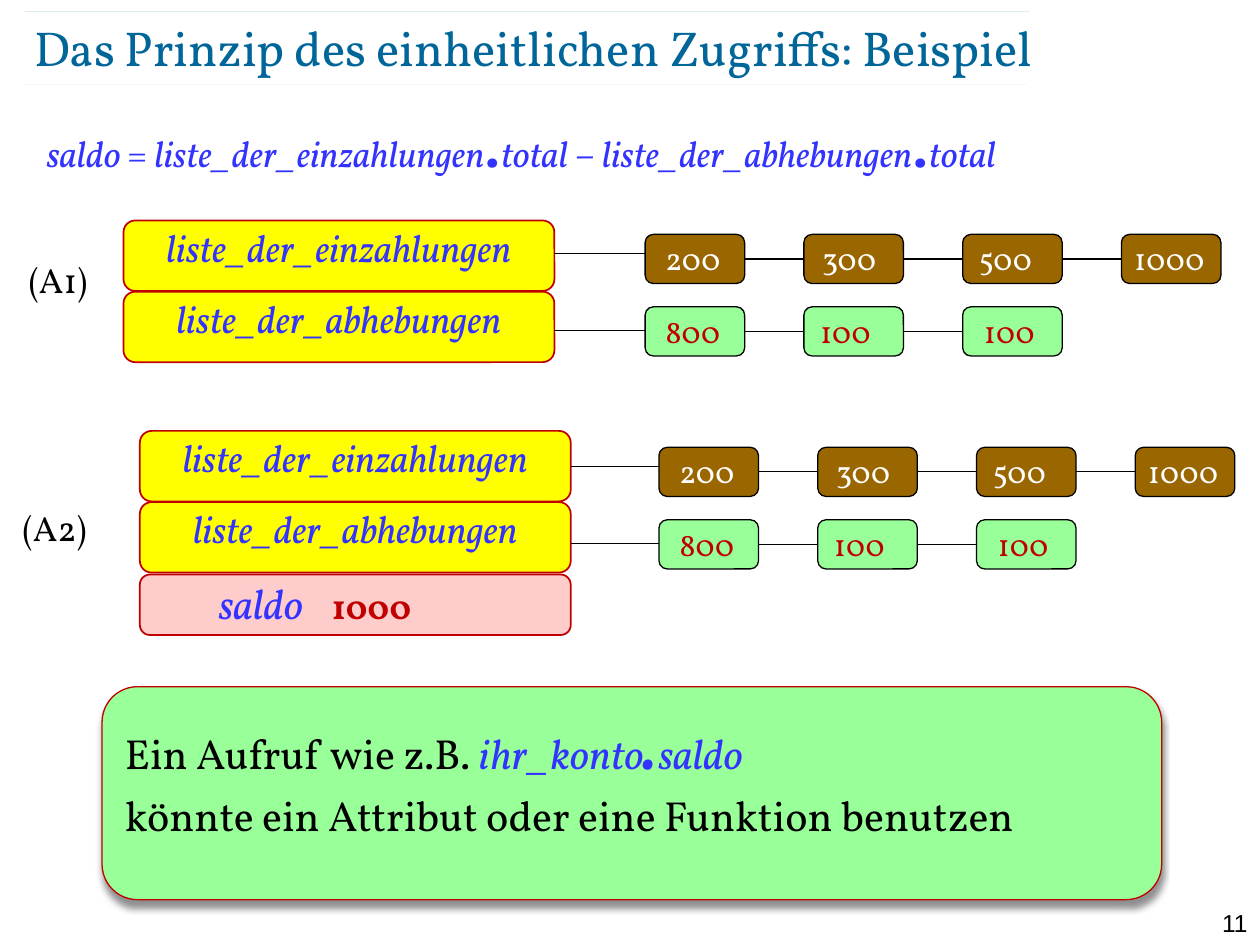
from lxml import etree
from pptx import Presentation
from pptx.dml.color import RGBColor
from pptx.enum import shapes, text
from pptx.oxml import parse_xml
from pptx.oxml.ns import nsdecls, qn
from pptx.util import Inches, Pt

color = RGBColor.from_string
LEFT, CENTER, RIGHT = text.PP_ALIGN.LEFT, text.PP_ALIGN.CENTER, text.PP_ALIGN.RIGHT
BLUE, RED, BLACK, GREEN = "3333FF", "C00000", "000000", "99FF99"

deck = Presentation()
deck.slide_width, deck.slide_height = Inches(10), Inches(7.5)
slide = deck.slides.add_slide(deck.slide_layouts[6])


def write(frame, words, size, ink, align=LEFT, inset=None, italic=False, font="Vollkorn"):
    frame.word_wrap = True
    frame.vertical_anchor = text.MSO_ANCHOR.TOP
    if inset is not None:
        frame.margin_left = frame.margin_top = frame.margin_right = frame.margin_bottom = Inches(inset)
    paragraph = frame.paragraphs[0]
    paragraph.alignment = align
    paragraph.font.name, paragraph.font.size = font, Pt(size)
    paragraph.font.color.rgb = color(ink)
    paragraph.font.italic = italic
    paragraph.add_run().text = words
    return paragraph


def rounded(left, top, width, height, fill, edge, weight):
    shape = slide.shapes.add_shape(shapes.MSO_SHAPE.ROUNDED_RECTANGLE,
                                   Inches(left), Inches(top), Inches(width), Inches(height))
    shape.shadow.inherit = False
    shape.fill.solid()
    shape.fill.fore_color.rgb = color(fill)
    shape.line.color.rgb = color(edge)
    shape.line.width = Pt(weight)
    return shape


number = slide.shapes.add_textbox(Inches(9.45), Inches(7.16), Inches(0.55), Inches(0.24))
write(number.text_frame, "11", 14, BLACK, RIGHT, font="Arial")

for left, top in [(0.18, 0.67), (0.2, 0.09)]:
    rule = slide.shapes.add_connector(shapes.MSO_CONNECTOR.STRAIGHT, Inches(left), Inches(top),
                                      Inches(left + 7.97), Inches(top))
    rule.line.color.rgb = color("006699")
    rule.line.width = Pt(0.1)
    tint = rule.line._ln.find(".//" + qn("a:srgbClr"))
    etree.SubElement(tint, qn("a:alpha"), val="35000")
    etree.SubElement(rule._element.spPr, qn("a:effectLst"))

title = slide.shapes.add_textbox(Inches(0.27), Inches(0.13), Inches(8.69), Inches(0.48))
write(title.text_frame, "Das Prinzip des einheitlichen Zugriffs: Beispiel", 28, "006699", inset=0)
title.text_frame.vertical_anchor = text.MSO_ANCHOR.MIDDLE

formula = slide.shapes.add_textbox(Inches(0.27), Inches(0.96), Inches(9.4), Inches(6.17))
equation = write(formula.text_frame, "saldo ", 21, BLUE, italic=True)
equation.line_spacing = 0.6
for words, size, italic in [("= ", 21, False), ("liste_der_einzahlungen", 21, True), (".", 40, False),
                            ("total", 21, True), (" – ", 21, False),
                            ("liste_der_abhebungen", 21, True), (".", 40, False), ("total", 21, True)]:
    run = equation.add_run()
    run.text = words
    run.font.size, run.font.italic = Pt(size), italic

summary = rounded(0.81, 5.45, 8.41, 1.69, GREEN, RED, 0.75)
effects = summary._element.spPr.find(qn("a:effectLst"))
effects.append(parse_xml(
    f'<a:outerShdw {nsdecls("a")} blurRad="50800" dist="50800" dir="5400000" algn="ctr" rotWithShape="0">'
    '<a:srgbClr val="000000"><a:alpha val="43000"/></a:srgbClr></a:outerShdw>'))
call = write(summary.text_frame, "Ein Aufruf wie z.B. ", 24, BLACK)
call.line_spacing = 0.9
for words, size in [("ihr_konto", 24), (".", 44), ("saldo", 24)]:
    run = call.add_run()
    run.text = words
    run.font.size, run.font.italic = Pt(size), True
    run.font.color.rgb = color(BLUE)
answer = summary.text_frame.add_paragraph()
answer.text = "könnte ein Attribut oder eine Funktion benutzen"
answer.alignment = LEFT
answer.line_spacing, answer.space_before = 0.9, Pt(5)
answer.font.name, answer.font.size = "Vollkorn", Pt(24)
answer.font.color.rgb = color(BLACK)

for name, left, top, width, inset in [("(A1)", 0.13, 2, 0.81, None), ("(A2)", 0.18, 4.02, 0.69, 0)]:
    variant = slide.shapes.add_textbox(Inches(left), Inches(top), Inches(width), Inches(0.43))
    write(variant.text_frame, name, 20, BLACK, inset=inset)

lists = [
    ("liste_der_einzahlungen", "996600", "FFFFFF", 0.15,
     [("200", -0.15), ("300", 1.09), ("500", 2.33), ("1000", 3.63)]),
    ("liste_der_abhebungen", GREEN, RED, 0.19,
     [("800", -0.15), ("100", 1.06), ("100", 2.36)]),
]
for field_left, field_top, chain_left, chain_top in [(0.98, 1.75, 5.12, 1.86), (1.11, 3.42, 5.23, 3.55)]:
    for row, (name, fill, ink, link_drop, amounts) in enumerate(lists):
        top = chain_top + row * 0.575
        field = rounded(field_left, field_top + row * 0.565, 3.42, 0.56, "FFFF00", RED, 1)
        write(field.text_frame, name, 22, BLUE, CENTER, 0, True)
        previous = None
        for column, (amount, offset) in enumerate(amounts):
            left = chain_left + column * 1.26
            entry = rounded(left, top, 0.79, 0.39, fill, BLACK, 0.75)
            link = slide.shapes.add_connector(shapes.MSO_CONNECTOR.STRAIGHT,
                                              Inches(field_left + 3.42), Inches(top + link_drop),
                                              Inches(left), Inches(top + link_drop))
            if previous:
                link.begin_connect(previous, 3)
                link.end_connect(entry, 1)
            link.line.color.rgb = color(BLACK)
            link.line.width = Pt(0.75)
            etree.SubElement(link._element.spPr, qn("a:effectLst"))
            value = slide.shapes.add_textbox(Inches(chain_left + offset), Inches(top - 0.01),
                                             Inches(1.06), Inches(0.4))
            write(value.text_frame, amount, 18, ink, CENTER)
            previous = entry

balance = rounded(1.11, 4.56, 3.42, 0.48, "FFCCCC", RED, 1)
properties = balance.text_frame.paragraphs[0]._p.get_or_add_pPr()
properties.set("marL", "0")
properties.set("indent", str(Inches(0.6)))
tabs = etree.SubElement(properties, qn("a:tabLst"))
etree.SubElement(tabs, qn("a:tab"), pos=str(Inches(1.58)), algn="l")
saldo = write(balance.text_frame, "saldo\t", 24, BLUE, inset=0, italic=True)
total = saldo.add_run()
total.text = "1000"
total.font.size, total.font.bold, total.font.italic = Pt(20), True, False
total.font.color.rgb = color(RED)

deck.save("out.pptx")
